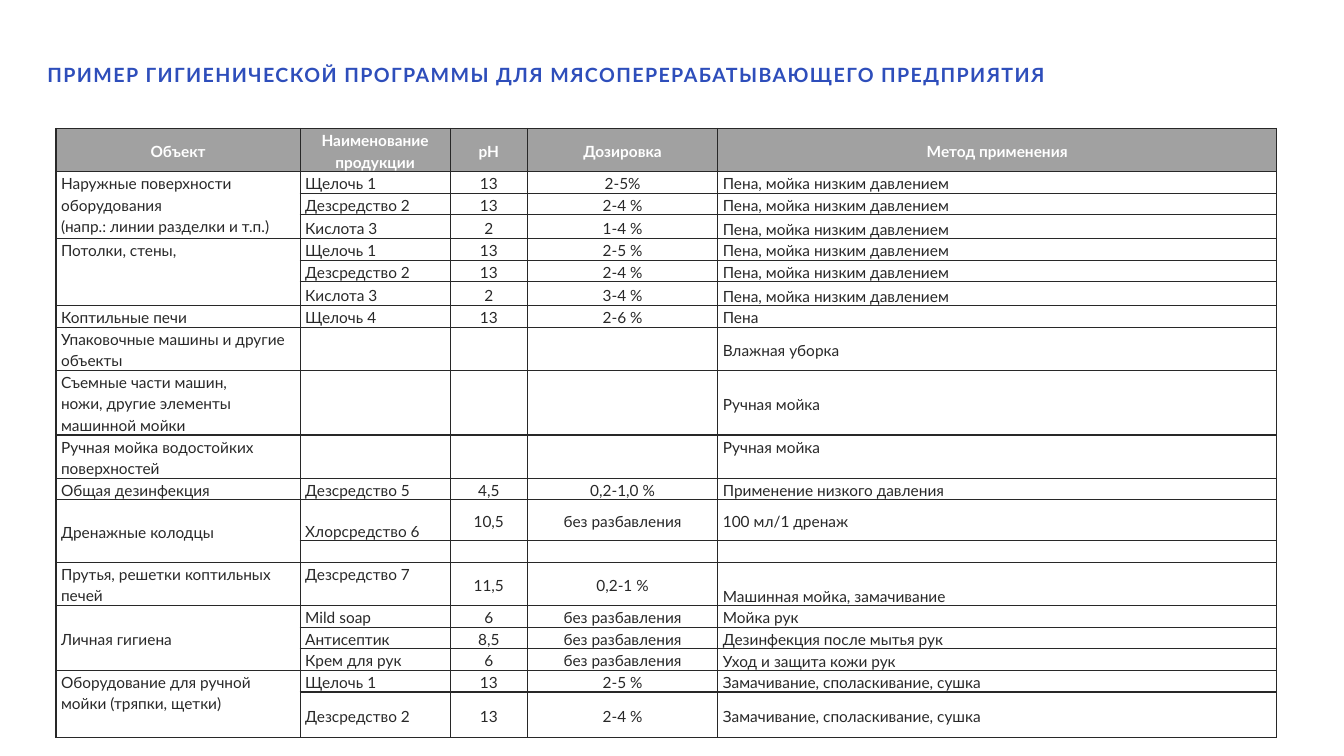
from dataclasses import dataclass

import lxml.etree
import pptx
import pptx.dml.color
import pptx.enum.text
import pptx.oxml.ns
import pptx.util

BLUE = pptx.dml.color.RGBColor(0x2E, 0x4E, 0xBB)
GREY = pptx.dml.color.RGBColor(0xA1, 0xA1, 0xA1)
INK = pptx.dml.color.RGBColor(0x28, 0x28, 0x28)
WHITE = pptx.dml.color.RGBColor(0xFF, 0xFF, 0xFF)

ALIGN = pptx.enum.text.PP_ALIGN
ANCHOR = pptx.enum.text.MSO_ANCHOR
ANCHORS = {"t": ANCHOR.TOP, "m": ANCHOR.MIDDLE, "b": ANCHOR.BOTTOM}

# Slide grid: 120 columns by 35 rows, one row holding one line of table text
SLIDE_WIDTH = pptx.util.Inches(13.33)
SLIDE_HEIGHT = pptx.util.Inches(7.5)
COLUMN_WIDTHS = (21.8, 13.4, 6.9, 17, 49.9)
COLUMN_ALIGNS = (ALIGN.LEFT, ALIGN.LEFT, ALIGN.CENTER, ALIGN.CENTER, ALIGN.LEFT)

TITLE_FONT = {"name": "Lato", "size": pptx.util.Pt(14), "bold": True}
HEADER_FONT = {"name": "Lato", "size": pptx.util.Pt(11), "bold": True}
BODY_FONT = {"name": "Lato", "size": pptx.util.Pt(11), "bold": False}
CELL_MARGINS = {
    "margin_left": pptx.util.Inches(0.05), "margin_right": pptx.util.Inches(0.05),
    "margin_top": 0, "margin_bottom": 0,
}


@dataclass
class Row:
    """One table row: height in grid rows, texts, anchors by column, merged rows."""
    height: float
    texts: tuple[str, str, str, str, str]
    anchors: str = "tmmmb"
    span: int = 1


FOAM = "Пена, мойка низким давлением"
SOAK = "Замачивание, споласкивание, сушка"
PURE = "без разбавления"
ALKALI, DISINFECTANT, ACID = "Щелочь 1", "Дезсредство 2", "Кислота 3"

ROWS = [
    Row(2, ("Объект", "Наименование\nпродукции", "pH", "Дозировка", "Метод применения"), "mmmmm"),
    Row(1, ("Наружные поверхности\nоборудования\n(напр.: линии разделки и т.п.)",
            ALKALI, "13", "2-5%", FOAM), span=3),
    Row(1, ("", DISINFECTANT, "13", "2-4 %", FOAM)),
    Row(1.1, ("", ACID, "2", "1-4 %", FOAM)),
    Row(1, ("Потолки, стены,", ALKALI, "13", "2-5 %", FOAM), span=3),
    Row(1, ("", DISINFECTANT, "13", "2-4 %", FOAM)),
    Row(1.1, ("", ACID, "2", "3-4 %", FOAM)),
    Row(1, ("Коптильные печи", "Щелочь 4", "13", "2-6 %", "Пена")),
    Row(2, ("Упаковочные машины и другие объекты", "", "", "", "Влажная уборка"), "tmmmm"),
    Row(3, ("Съемные части машин,\nножи, другие элементы\nмашинной мойки",
            "", "", "", "Ручная мойка"), "tmmmm"),
    Row(2, ("Ручная мойка водостойких поверхностей", "", "", "", "Ручная мойка"), "tmmmt"),
    Row(1, ("Общая дезинфекция", "Дезсредство 5", "4,5", "0,2-1,0 %", "Применение низкого давления")),
    Row(1.9, ("Дренажные колодцы", "Хлорсредство 6", "10,5", PURE, "100 мл/1 дренаж"), "mbmmm", 2),
    Row(1, ("", "", "", "", "")),
    Row(2, ("Прутья, решетки коптильных печей", "Дезсредство 7", "11,5", "0,2-1 %",
            "Машинная мойка, замачивание"), "ttmmb"),
    Row(1, ("Личная гигиена", "Mild soap", "6", PURE, "Мойка рук"), "mmmmb", 3),
    Row(1, ("", "Антисептик", "8,5", PURE, "Дезинфекция после мытья рук")),
    Row(1, ("", "Крем для рук", "6", PURE, "Уход и защита кожи рук")),
    Row(1, ("Оборудование для ручной мойки (тряпки, щетки)", ALKALI, "13", "2-5 %", SOAK), span=2),
    Row(2.1, ("", DISINFECTANT, "13", "2-4 %", SOAK), "tmmmm"),
]


def across(columns: float) -> int:
    return round(SLIDE_WIDTH * columns / 120)


def down(rows: float) -> int:
    return round(SLIDE_HEIGHT * rows / 35)


def apply_format(target: object, values: dict) -> None:
    for name, value in values.items():
        setattr(target, name, value)


def add_borders(cell) -> None:
    properties = cell._tc.get_or_add_tcPr()
    for position, side in enumerate(("lnL", "lnR", "lnT", "lnB")):
        line = lxml.etree.Element(pptx.oxml.ns.qn(f"a:{side}"), w=str(pptx.util.Pt(1)))
        fill = lxml.etree.SubElement(line, pptx.oxml.ns.qn("a:solidFill"))
        lxml.etree.SubElement(fill, pptx.oxml.ns.qn("a:srgbClr"), val=str(INK))
        properties.insert(position, line)


def fill_cell(cell, text: str, anchor: str, align: ALIGN, is_header: bool) -> None:
    apply_format(cell, CELL_MARGINS | {"vertical_anchor": ANCHORS[anchor], "text": text})
    if is_header:
        cell.fill.solid()
        cell.fill.fore_color.rgb = GREY
    else:
        cell.fill.background()
    add_borders(cell)
    for para in cell.text_frame.paragraphs:
        apply_format(para, {"alignment": align, "line_spacing": 1.15})
        for span in para.runs:
            apply_format(span.font, HEADER_FONT if is_header else BODY_FONT)
            span.font.color.rgb = WHITE if is_header else INK
        if not para.runs:
            # Keeps an empty cell from stretching its row
            para._p.get_or_add_endParaRPr().set("sz", "1100")


def add_title(page) -> None:
    box = page.shapes.add_textbox(across(-3.6), down(0.7), across(104.8), down(6.5))
    apply_format(box.text_frame, {
        "word_wrap": True, "vertical_anchor": ANCHOR.MIDDLE, "margin_left": 0,
        "margin_right": 0, "margin_top": 0, "margin_bottom": down(1),
    })
    para = box.text_frame.paragraphs[0]
    para.alignment = ALIGN.CENTER
    span = para.add_run()
    span.text = "ПРИМЕР ГИГИЕНИЧЕСКОЙ ПРОГРАММЫ ДЛЯ МЯСОПЕРЕРАБАТЫВАЮЩЕГО ПРЕДПРИЯТИЯ"
    apply_format(span.font, TITLE_FONT)
    span.font.color.rgb = BLUE
    span.font._element.set("spc", "100")


def add_program_table(page) -> None:
    table = page.shapes.add_table(
        len(ROWS), len(COLUMN_WIDTHS), across(5), down(5.95),
        across(sum(COLUMN_WIDTHS)), down(sum(row.height for row in ROWS)),
    ).table
    apply_format(table, {"first_row": False, "horz_banding": False})
    for column, width in zip(table.columns, COLUMN_WIDTHS):
        column.width = across(width)
    for index, row in enumerate(ROWS):
        table.rows[index].height = down(row.height)
        for column, text in enumerate(row.texts):
            is_header = index == 0
            align = ALIGN.CENTER if is_header else COLUMN_ALIGNS[column]
            fill_cell(table.cell(index, column), text, row.anchors[column], align, is_header)
    # Objects that cover several products
    for index, row in enumerate(ROWS):
        if row.span > 1:
            table.cell(index, 0).merge(table.cell(index + row.span - 1, 0))


def main() -> None:
    deck = pptx.Presentation()
    apply_format(deck, {"slide_width": SLIDE_WIDTH, "slide_height": SLIDE_HEIGHT})
    page = deck.slides.add_slide(deck.slide_layouts[6])
    add_title(page)
    add_program_table(page)
    deck.save("out.pptx")


if __name__ == "__main__":
    main()
